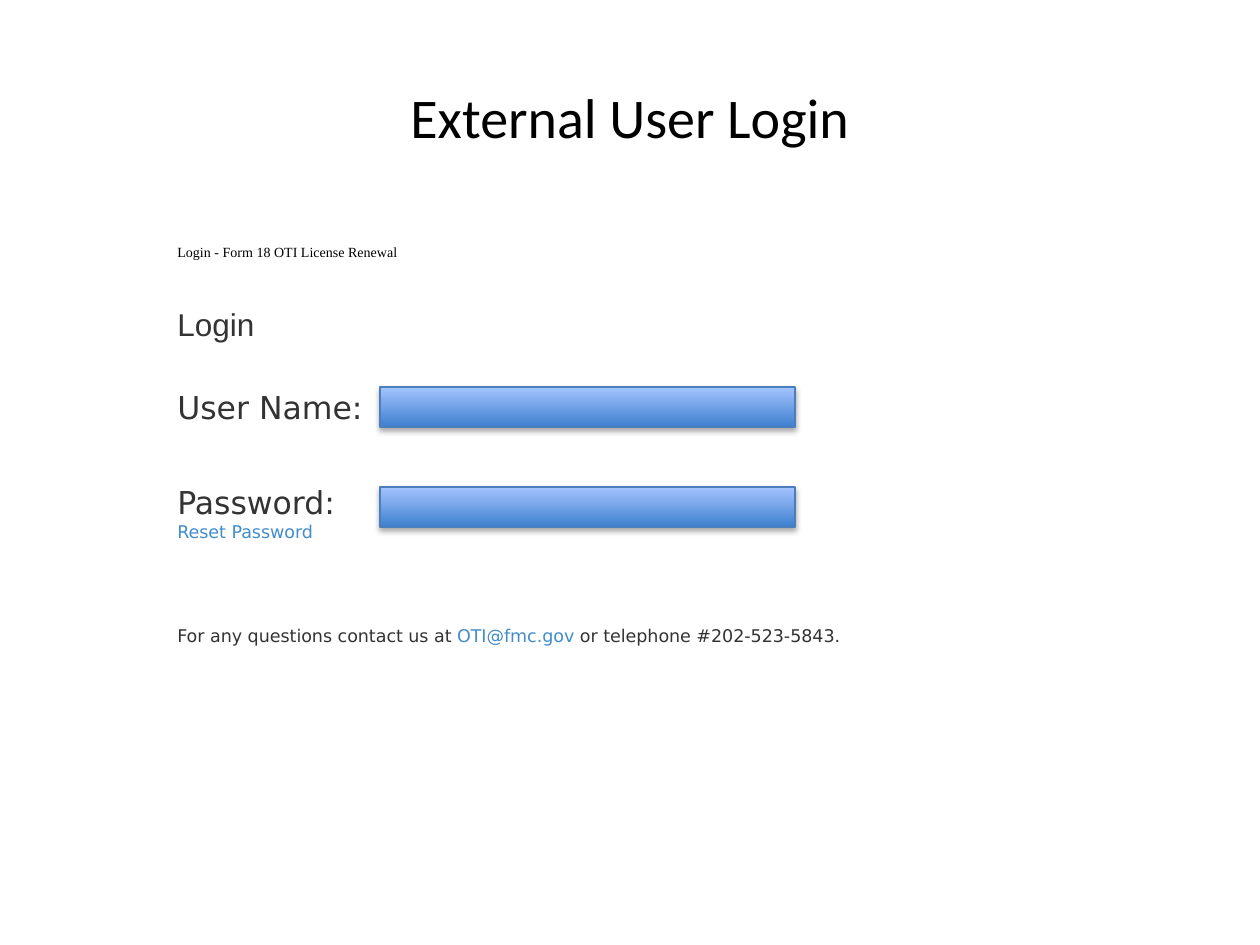
from lxml import etree
from pptx import Presentation
from pptx.dml.color import RGBColor
from pptx.enum.shapes import MSO_SHAPE
from pptx.enum.text import MSO_ANCHOR, MSO_AUTO_SIZE, PP_ALIGN
from pptx.oxml import parse_xml
from pptx.util import Emu, Pt

RECTANGLE = MSO_SHAPE.RECTANGLE
MIDDLE = MSO_ANCHOR.MIDDLE
CENTER = PP_ALIGN.CENTER
FIT_SHAPE = MSO_AUTO_SIZE.SHAPE_TO_FIT_TEXT

BLACK = RGBColor(0x00, 0x00, 0x00)
GRAY = RGBColor(0x33, 0x33, 0x33)
LINK_BLUE = RGBColor(0x42, 0x8C, 0xCB)
FIELD_DARK = RGBColor(0x3F, 0x80, 0xCE)
FIELD_LIGHT = RGBColor(0xA4, 0xC4, 0xFF)
FIELD_LINE = RGBColor(0x4B, 0x7E, 0xBC)

SHADOW = (
    '<a:effectLst xmlns:a="http://schemas.openxmlformats.org/drawingml/2006/main">'
    '<a:outerShdw blurRad="40000" dist="23000" dir="5400000" rotWithShape="0">'
    '<a:srgbClr val="000000"><a:alpha val="35000"/></a:srgbClr>'
    '</a:outerShdw></a:effectLst>'
)


def px(*lengths):
    return [Emu(round(length * 914400 / 126)) for length in lengths]


def add_text(top, width, height, wrap, font_name, paragraphs):
    box = page.shapes.add_textbox(*px(165, top, width, height))
    frame = box.text_frame
    frame.word_wrap = wrap
    frame.auto_size = FIT_SHAPE
    for index, (size, spans) in enumerate(paragraphs):
        para = frame.add_paragraph() if index else frame.paragraphs[0]
        para.font.name = font_name
        para.font.size = Pt(size)
        for text, color in spans:
            span = para.add_run()
            span.text = text
            span.font.color.rgb = color


deck = Presentation()
deck.slide_width, deck.slide_height = px(1260, 945)
page = deck.slides.add_slide(deck.slide_layouts[5])

title = page.shapes.title
title.left, title.top, title.width, title.height = px(63, 38, 1134, 157)
title.text_frame.text = "External User Login"
title.text_frame.vertical_anchor = MIDDLE
heading = title.text_frame.paragraphs[0]
heading.alignment = CENTER
heading.font.name = "Calibri"
heading.font.size = Pt(32)
heading.font.color.rgb = BLACK

texts = [
    (237, 247, 30, False, "Times New Roman",
     [(8, [("Login - Form 18 OTI License Renewal", BLACK)])]),
    (299, 103, 50, False, "Arial", [(18, [("Login", GRAY)])]),
    (382, 215, 50, False, "DejaVu Sans", [(18, [("User Name:", GRAY)])]),
    (477, 630, 72, True, "DejaVu Sans",
     [(18, [("Password:", GRAY)]), (10, [("Reset Password", LINK_BLUE)])]),
    (619, 856, 34, True, "DejaVu Sans",
     [(10, [("For any questions contact us at ", GRAY),
            ("OTI@fmc.gov ", LINK_BLUE),
            ("or telephone #202-523-5843.", GRAY)])]),
]
for text in texts:
    add_text(*text)

for top in (387, 487):
    field = page.shapes.add_shape(RECTANGLE, *px(380, top, 415, 40))
    field.fill.gradient()
    field.fill.gradient_angle = 90
    for stop, color, position in zip(
        field.fill.gradient_stops, (FIELD_DARK, FIELD_LIGHT), (0, 1)
    ):
        stop.color.rgb = color
        stop.position = position
    field.line.color.rgb = FIELD_LINE
    field.line.width = Pt(0.75)
    field.element.spPr.append(parse_xml(etree.tostring(etree.fromstring(SHADOW))))

deck.save("out.pptx")
